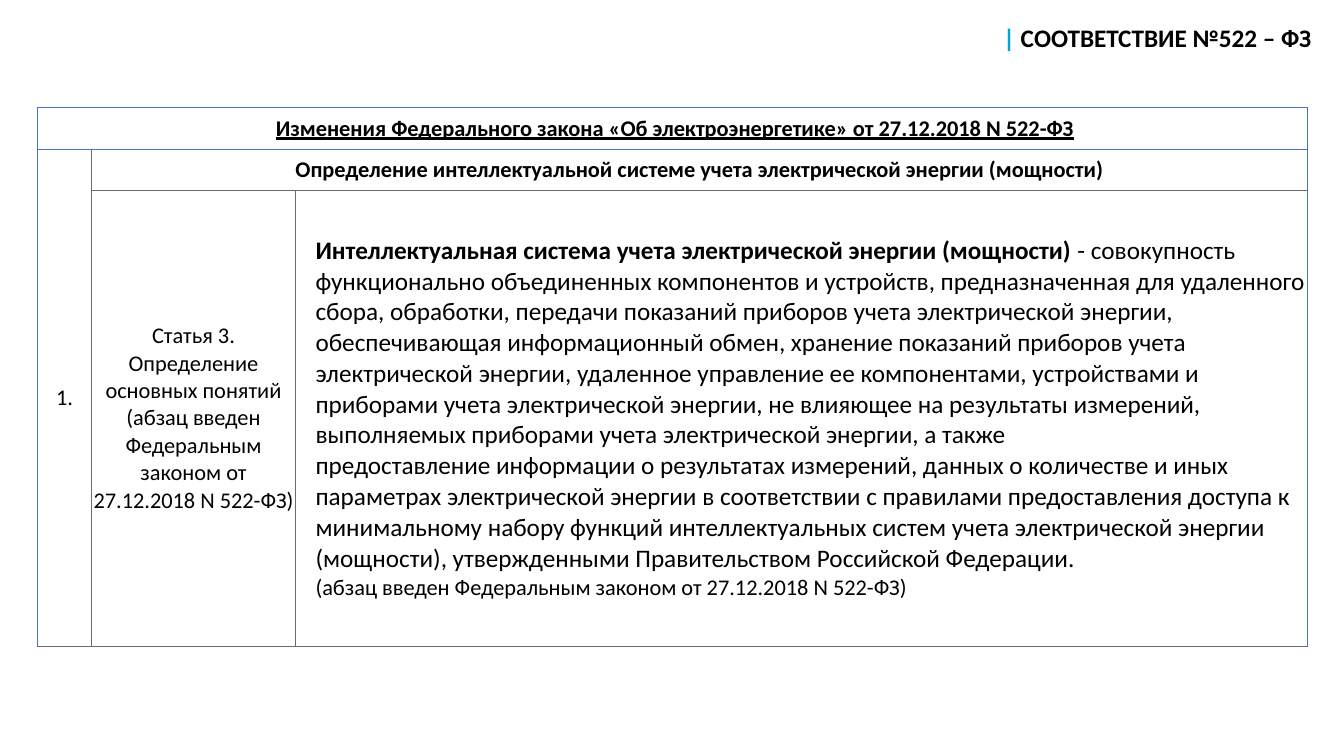
from lxml.etree import SubElement
from pptx import Presentation
from pptx.dml.color import RGBColor
from pptx.enum.text import MSO_ANCHOR, PP_ALIGN
from pptx.oxml.ns import qn
from pptx.util import Inches, Pt

# Content: each text is a list of (text, format) runs
TITLE = [("| ", {"color": "accent", "bold": True}),
         ("СООТВЕТСТВИЕ №522 – ФЗ", {"bold": True})]
DEFINITION = (
    "- совокупность\n"
    "функционально объединенных компонентов и устройств, предназначенная для удаленного "
    "сбора, обработки, передачи показаний приборов учета электрической энергии, "
    "обеспечивающая информационный обмен, хранение показаний приборов учета "
    "электрической энергии, удаленное управление ее компонентами, устройствами и "
    "приборами учета электрической энергии, не влияющее на результаты измерений, "
    "выполняемых приборами учета электрической энергии, а также\n"
    "предоставление информации о результатах измерений, данных о количестве и иных "
    "параметрах электрической энергии в соответствии с правилами предоставления доступа к "
    "минимальному набору функций интеллектуальных систем учета электрической энергии "
    "(мощности), утвержденными Правительством Российской Федерации.\n")

# (row, column): runs
CELLS = {
    (0, 0): [(" ", {}),
             ("Изменения Федерального закона «Об электроэнергетике» от 27.12.2018 N 522-ФЗ",
              {"bold": True, "underline": True})],
    (1, 0): [("1.", {})],
    (1, 1): [("Определение интеллектуальной системе учета электрической энергии (мощности)",
              {"bold": True})],
    (2, 1): [("Статья 3. Определение основных понятий (абзац введен Федеральным законом "
              "от 27.12.2018 N 522-ФЗ)", {})],
    (2, 2): [("Интеллектуальная система учета электрической энергии (мощности) ",
              {"size": "large", "bold": True}),
             (DEFINITION, {"size": "large"}),
             ("(абзац введен Федеральным законом от 27.12.2018 N 522-ФЗ)", {})],
}
MERGES = [((0, 0), (0, 2)), ((1, 0), (2, 0)), ((1, 1), (1, 2))]
COL_WIDTHS = [0.54, 2.02, 10.04]
ROW_HEIGHTS = [0.41, 0.41, 4.52]
DEFINITION_CELL = (2, 2)

THEME = {"font": "Calibri", "large": 18, "body": 16, "text": "000000",
         "accent": "00A5D8", "frame": ("4472C4", 1), "grid": ("6B6B6B", 0.5)}


def write(tf, runs, size="body", align=PP_ALIGN.LEFT, indent=0):
    p = tf.paragraphs[0]
    p.alignment = align
    if indent:
        pPr = p._p.get_or_add_pPr()
        pPr.set("marL", str(Inches(indent)))
        pPr.set("indent", "0")
    for text, fmt in runs:
        for i, line in enumerate(text.split("\n")):
            if i:
                p.add_line_break()
            if not line:
                continue
            r = p.add_run()
            r.text = line
            r.font.name = THEME["font"]
            r.font.size = Pt(THEME[fmt.get("size", size)])
            r.font.bold = fmt.get("bold", False)
            r.font.underline = fmt.get("underline", False)
            r.font.color.rgb = RGBColor.from_string(THEME[fmt.get("color", "text")])


def set_borders(cell, styles):
    tcPr = cell._tc.get_or_add_tcPr()
    for side, style in styles.items():
        color, width = THEME[style]
        ln = SubElement(tcPr, qn(f"a:ln{side}"), w=str(Pt(width)))
        SubElement(SubElement(ln, qn("a:solidFill")), qn("a:srgbClr"), val=color)


prs = Presentation()
prs.slide_width, prs.slide_height = Inches(13.33), Inches(7.5)
s = prs.slides.add_slide(prs.slide_layouts[6])

# Title
box = s.shapes.add_textbox(Inches(9.85), Inches(0.17), Inches(3.39), Inches(0.4))
box.text_frame.word_wrap = True
write(box.text_frame, TITLE, size="large")

# Table
n_rows, n_cols = len(ROW_HEIGHTS), len(COL_WIDTHS)
table = s.shapes.add_table(n_rows, n_cols, Inches(0.37), Inches(1.07),
                           Inches(sum(COL_WIDTHS)), Inches(sum(ROW_HEIGHTS))).table
table.first_row = table.horz_banding = False
for col, width in zip(table.columns, COL_WIDTHS):
    col.width = Inches(width)
for row, height in zip(table.rows, ROW_HEIGHTS):
    row.height = Inches(height)
for first, last in MERGES:
    table.cell(*first).merge(table.cell(*last))

# Cells: blue frame around the table and its heading, grey grid inside
for r in range(n_rows):
    for c in range(n_cols):
        cell = table.cell(r, c)
        last_col = c + (cell.span_width if cell.is_merge_origin else 1) - 1
        framed = {"L": c == 0, "R": last_col == n_cols - 1, "T": r <= 1, "B": r == 0}
        set_borders(cell, {side: "frame" if on else "grid" for side, on in framed.items()})
        cell.fill.background()
        cell.margin_left = cell.margin_right = cell.margin_top = cell.margin_bottom = 0
        cell.vertical_anchor = MSO_ANCHOR.MIDDLE
        if (r, c) == DEFINITION_CELL:
            write(cell.text_frame, CELLS[r, c], indent=0.2)
        elif (r, c) in CELLS:
            write(cell.text_frame, CELLS[r, c], align=PP_ALIGN.CENTER)

prs.save("out.pptx")
